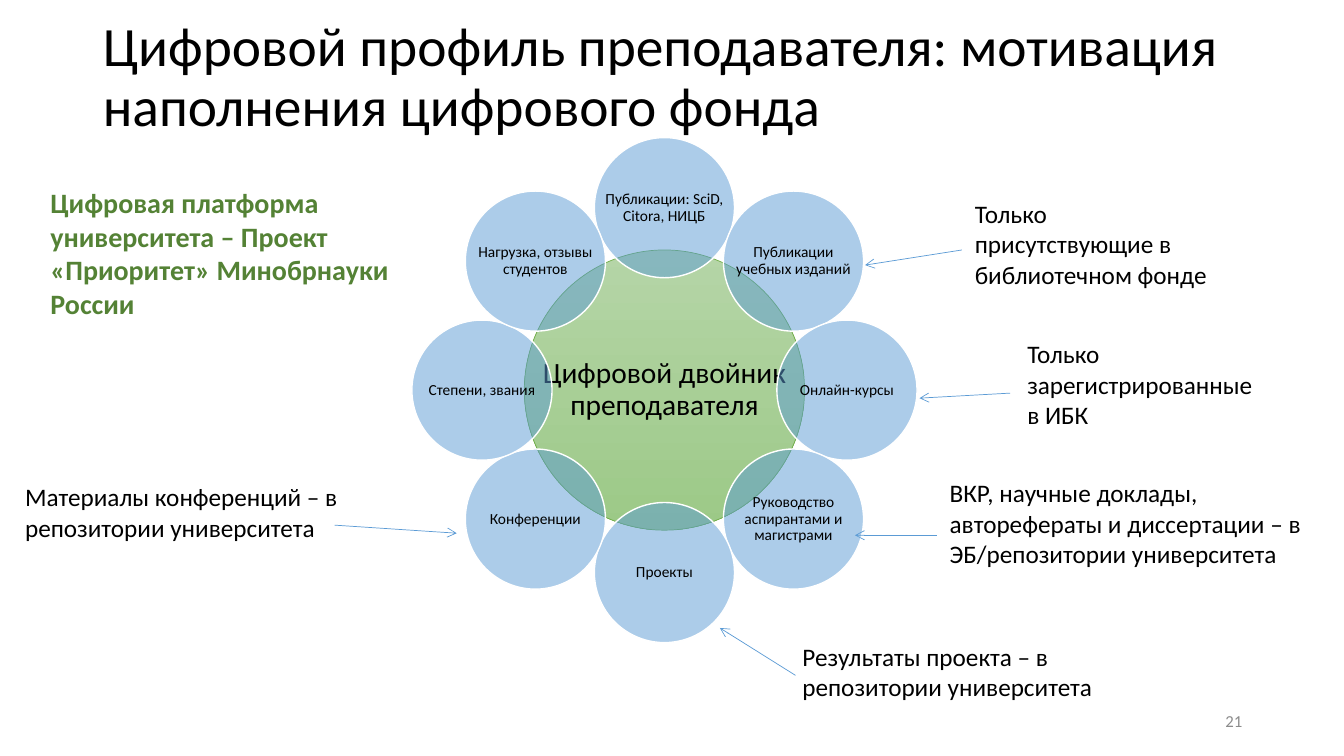
from math import cos, pi, sin

from lxml.etree import SubElement
from pptx import Presentation
from pptx.dml.color import RGBColor
from pptx.enum.shapes import MSO_CONNECTOR, MSO_SHAPE
from pptx.enum.text import MSO_ANCHOR as Anchor, PP_ALIGN as Align
from pptx.oxml.ns import qn
from pptx.util import Inches, Pt

COLORS = {name: RGBColor.from_string(value) for name, value in {
    "text": "000000", "platform": "548235", "number": "8C8C8C",
    "petal": "5B9BD5", "petal_edge": "FFFFFF", "core_edge": "70AD47",
    "core_top": "B5D5A7", "core_bottom": "9CC987",
}.items()}
CENTER_X, CENTER_Y = 6.59, 3.87
RING_RADIUS = 1.81
CORE_SIZE = 2.78
PETAL_SIZE = CORE_SIZE / 2


def write(box, text, size, color="text", align=Align.LEFT, anchor=Anchor.TOP,
          spacing=1.0, inset=None, bold=False):
    frame = box.text_frame
    frame.word_wrap = True
    frame.vertical_anchor = anchor
    if inset is not None:
        frame.margin_left = frame.margin_right = Inches(inset)
        frame.margin_top = frame.margin_bottom = Inches(inset)
    para = frame.paragraphs[0]
    para.text = text
    para.alignment = align
    para.line_spacing = spacing
    para.font.name = "Calibri"
    para.font.size = Pt(size)
    para.font.bold = bold
    para.font.color.rgb = COLORS[color]


def add_circle(x, y, diameter, text, size, inset, edge, edge_width):
    """Add a circle centred on x, y with a label as wide as the circle."""
    area = [Inches(v) for v in
            (x - diameter / 2, y - diameter / 2, diameter, diameter)]
    circle = page.shapes.add_shape(MSO_SHAPE.OVAL, *area)
    circle.shadow.inherit = False
    circle.line.color.rgb = COLORS[edge]
    circle.line.width = Pt(edge_width)
    write(page.shapes.add_textbox(*area), text, size, align=Align.CENTER,
          anchor=Anchor.MIDDLE, spacing=0.9, inset=inset)
    return circle


deck = Presentation()
deck.slide_width, deck.slide_height = Inches(13.33), Inches(7.5)
page = deck.slides.add_slide(deck.slide_layouts[5])

title = page.shapes.title
title.left, title.top = Inches(0.92), Inches(0.4)
title.width, title.height = Inches(11.5), Inches(0.76)
write(title, "Цифровой профиль преподавателя: мотивация наполнения цифрового фонда",
      39.6, anchor=Anchor.MIDDLE, spacing=0.9)

# Core of the diagram
core = add_circle(CENTER_X, CENTER_Y, CORE_SIZE, "Цифровой двойник преподавателя",
                  21, 0.03, "core_edge", 0.5)
core.fill.gradient()
core.fill.gradient_angle = 270
for stop, name in zip(core.fill.gradient_stops, ("core_top", "core_bottom")):
    stop.color.rgb = COLORS[name]

# Petals, clockwise from the top
petals = [
    "Публикации: SciD, Citora, НИЦБ",
    "Публикации учебных изданий",
    "Онлайн-курсы",
    "Руководство аспирантами и магистрами",
    "Проекты",
    "Конференции",
    "Степени, звания",
    "Нагрузка, отзывы студентов",
]
for index, label in enumerate(petals):
    angle = 2 * pi * index / len(petals)
    petal = add_circle(CENTER_X + RING_RADIUS * sin(angle),
                       CENTER_Y - RING_RADIUS * cos(angle),
                       PETAL_SIZE, label, 11, 0.02, "petal_edge", 1)
    petal.fill.solid()
    petal.fill.fore_color.rgb = COLORS["petal"]
    tint = petal.fill._xPr.find(qn("a:solidFill"))[0]
    SubElement(tint, qn("a:alpha"), val="50000")

# Notes around the ring: left, top, width, height, text, arrow start and end
notes = [
    (9.57, 1.92, 2.51, 1.01, "Только присутствующие в библиотечном фонде",
     (9.54, 2.48), (8.58, 2.63)),
    (10.09, 3.31, 2.51, 1.01, "Только зарегистрированные в ИБК",
     (10.02, 3.9), (9.12, 3.95)),
    (9.32, 4.69, 3.75, 1.01,
     "ВКР, научные доклады, авторефераты и диссертации – в ЭБ/репозитории университета",
     (9.29, 5.31), (8.48, 5.31)),
    (7.86, 6.31, 3.75, 0.71, "Результаты проекта – в репозитории университета",
     (7.89, 6.7), (7.14, 6.23)),
    (0.15, 4.73, 3.75, 0.71, "Материалы конференций – в репозитории университета",
     (3.32, 5.21), (4.53, 5.29)),
]
for *area, text, start, end in notes:
    write(page.shapes.add_textbox(*map(Inches, area)), text, 18)
    arrow = page.shapes.add_connector(MSO_CONNECTOR.STRAIGHT,
                                      *map(Inches, start + end))
    arrow.line.color.rgb = COLORS["petal"]
    arrow.line.width = Pt(0.5)
    SubElement(arrow.line._get_or_add_ln(), qn("a:tailEnd"), type="arrow")
    SubElement(arrow._element.spPr, qn("a:effectLst"))

platform = page.shapes.add_textbox(*map(Inches, (0.4, 1.79, 3.59, 1.45)))
write(platform, "Цифровая платформа университета – Проект «Приоритет» Минобрнауки России",
      20, "platform", bold=True)

number = page.shapes.add_textbox(*map(Inches, (9.42, 6.95, 3, 0.4)))
write(number, "21", 12, "number", Align.RIGHT, Anchor.MIDDLE)

deck.save("out.pptx")
